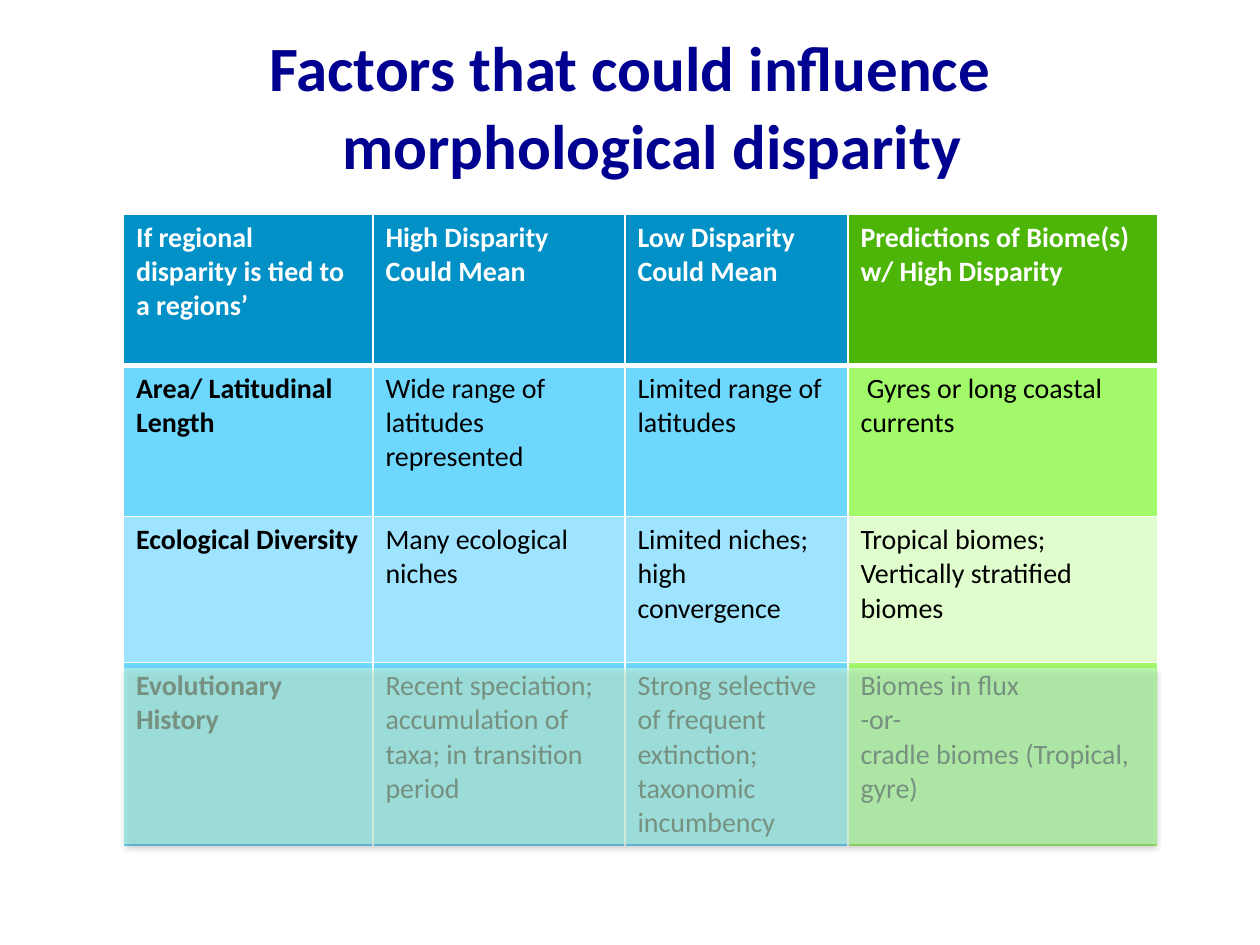
from pptx import Presentation
from pptx.dml.color import RGBColor
from pptx.enum.shapes import MSO_SHAPE
from pptx.enum.text import MSO_ANCHOR, MSO_AUTO_SIZE, PP_ALIGN
from pptx.oxml import parse_xml
from pptx.oxml.ns import nsdecls, qn
from pptx.util import Inches, Pt
from lxml import etree

RECT = MSO_SHAPE.RECTANGLE
CENTER = PP_ALIGN.CENTER
MIDDLE = MSO_ANCHOR.MIDDLE
NO_AUTOFIT = MSO_AUTO_SIZE.NONE

FONT = "Calibri"
COLORS = {
    "navy": "000090", "white": "FFFFFF", "black": "000000",
    "blue": "0191C7", "blue_mid": "6DD7FE", "blue_light": "9EE4FF",
    "green": "4CB508", "green_mid": "A2F96A", "green_light": "E0FDCD",
    "veil": "D0FFE2",
}
LEFT, TOP, WIDTH = 0.98, 1.7, 8.2
COL_WIDTHS = [1.98, 2, 1.77, 2.46]
ROW_HEIGHTS = [1.2, 1.2, 1.16, 1.2]
# Fill of each row: factor columns, prediction column
ROW_FILLS = [("blue", "green"), ("blue_mid", "green_mid"),
             ("blue_light", "green_light"), ("blue_mid", "green_mid")]
ROWS = [
    ["If regional disparity is tied to a regions’",
     "High Disparity\nCould Mean",
     "Low Disparity Could Mean",
     "Predictions of Biome(s) w/ High Disparity"],
    ["Area/ Latitudinal Length",
     "Wide range of latitudes represented",
     "Limited range of latitudes",
     " Gyres or long coastal currents"],
    ["Ecological Diversity",
     "Many ecological niches",
     "Limited niches; high convergence",
     "Tropical biomes;\nVertically stratified biomes"],
    ["Evolutionary History",
     "Recent speciation; accumulation of taxa; in transition period",
     "Strong selective of frequent extinction; taxonomic incumbency",
     "Biomes in flux\n-or-\ncradle biomes (Tropical, gyre)"],
]


def rgb(name):
    return RGBColor.from_string(COLORS[name])


def set_font(p, size, color, bold):
    p.font.name = FONT
    p.font.size = Pt(size)
    p.font.bold = bold
    p.font.color.rgb = rgb(color)


def add_title(s, text):
    title = s.shapes.title
    title.left, title.top = Inches(0.5), Inches(0.2)
    title.width, title.height = Inches(9), Inches(1.25)
    tf = title.text_frame
    tf.text = text
    tf.word_wrap = True
    tf.auto_size = NO_AUTOFIT
    tf.vertical_anchor = MIDDLE
    p = tf.paragraphs[0]
    p.alignment = CENTER
    p.line_spacing = 1.04
    set_font(p, 36, "navy", True)
    # Hanging indent
    pPr = p._p.get_or_add_pPr()
    pPr.set("marL", str(Inches(0.35)))
    pPr.set("indent", str(-Inches(0.35)))


def set_borders(cell, widths):
    tcPr = cell._tc.get_or_add_tcPr()
    for side, width in widths.items():
        tcPr.append(parse_xml(
            f'<a:ln{side} {nsdecls("a")} w="{Pt(width)}"><a:solidFill>'
            f'<a:srgbClr val="{COLORS["white"]}"/></a:solidFill></a:ln{side}>'))


def fill_cell(cell, text, row, col):
    cell.text = text
    for p in cell.text_frame.paragraphs:
        set_font(p, 16, "white" if row == 0 else "black", row == 0 or col == 0)
    # A thick rule separates the header from the body
    set_borders(cell, {"L": 1, "R": 1, "T": 3 if row == 1 else 1,
                       "B": 3 if row == 0 else 1})
    factor, prediction = ROW_FILLS[row]
    cell.fill.solid()
    cell.fill.fore_color.rgb = rgb(prediction if col == 3 else factor)


def add_factor_table(s):
    table = s.shapes.add_table(
        len(ROWS), len(COL_WIDTHS), Inches(LEFT), Inches(TOP),
        Inches(WIDTH), Inches(sum(ROW_HEIGHTS))).table
    for column, width in zip(table.columns, COL_WIDTHS):
        column.width = Inches(width)
    for row, height in zip(table.rows, ROW_HEIGHTS):
        row.height = Inches(height)
    for i, texts in enumerate(ROWS):
        for j, text in enumerate(texts):
            fill_cell(table.cell(i, j), text, i, j)


def add_veil(s, top, height):
    sp = s.shapes.add_shape(RECT, Inches(LEFT), Inches(top),
                            Inches(WIDTH), Inches(height))
    sp.fill.solid()
    sp.fill.fore_color.rgb = rgb("veil")
    sp.line.fill.background()
    # Transparency
    clr = sp._element.spPr.find(qn("a:solidFill"))[0]
    etree.SubElement(clr, qn("a:alpha"), val="57000")
    # Soft shadow below
    sp.shadow.inherit = False
    effects = sp._element.spPr.find(qn("a:effectLst"))
    effects.append(parse_xml(
        f'<a:outerShdw {nsdecls("a")} blurRad="{Pt(3.1)}" dist="{Pt(1.8)}" '
        f'dir="5400000" rotWithShape="0"><a:srgbClr val="{COLORS["black"]}">'
        '<a:alpha val="35000"/></a:srgbClr></a:outerShdw>'))


def main():
    prs = Presentation()
    prs.slide_width, prs.slide_height = Inches(10), Inches(7.5)
    s = prs.slides.add_slide(prs.slide_layouts[5])
    add_title(s, "Factors that could influence morphological disparity")
    add_factor_table(s)
    # Fade the last row
    add_veil(s, 5.3, 1.4)
    prs.save("out.pptx")


if __name__ == "__main__":
    main()
